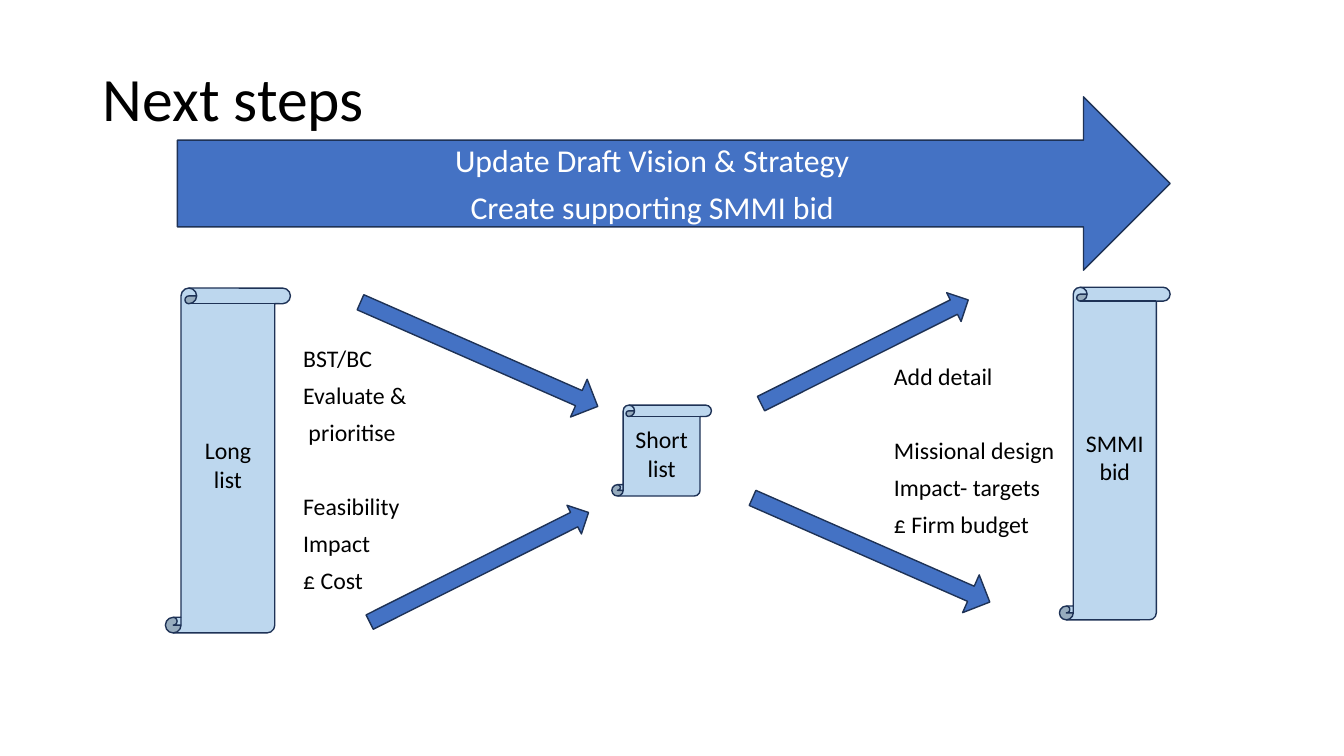
from pptx import Presentation
from pptx.dml.color import RGBColor
from pptx.enum.shapes import MSO_SHAPE
from pptx.enum.text import MSO_ANCHOR, MSO_AUTO_SIZE, PP_ALIGN
from pptx.util import Cm, Pt

ARROW = MSO_SHAPE.RIGHT_ARROW
SCROLL = MSO_SHAPE.VERTICAL_SCROLL
MIDDLE, BOTTOM = MSO_ANCHOR.MIDDLE, MSO_ANCHOR.BOTTOM
LEFT, CENTER = PP_ALIGN.LEFT, PP_ALIGN.CENTER
FIXED, GROW = MSO_AUTO_SIZE.NONE, MSO_AUTO_SIZE.SHAPE_TO_FIT_TEXT
COLORS = {"blue": "4472C4", "pale": "BDD7EE", "edge": "1E3256",
          "black": "000000", "white": "FFFFFF"}


def color(name):
    return RGBColor.from_string(COLORS[name])


def apply(target, values):
    for name, value in values.items():
        setattr(target, name, value)


class Board:
    font = "Calibri"
    size = 17
    after = Pt(6)
    gap = Pt(26.7)

    def __init__(self, deck):
        self.slide = deck.slides.add_slide(deck.slide_layouts[5])

    def fill_text(self, frame, lines, form, size=size, ink="black", breaks=()):
        for i, line in enumerate(lines):
            para = frame.paragraphs[0] if i == 0 else frame.add_paragraph()
            run = para.add_run()
            run.text = line
            apply(para, form)
            if i in breaks:
                para.space_before = self.gap
            apply(run.font, {"name": self.font, "size": Pt(size)})
            run.font.color.rgb = color(ink)

    def title(self, text, box):
        head = self.slide.shapes.title
        apply(head, dict(zip(("left", "top", "width", "height"), map(Cm, box))))
        apply(head.text_frame, {"vertical_anchor": BOTTOM, "word_wrap": True,
                                "auto_size": FIXED})
        form = {"alignment": LEFT, "line_spacing": 0.9, "space_before": Pt(0)}
        self.fill_text(head.text_frame, [text], form, 44)

    def shape(self, kind, box, fill):
        item = self.slide.shapes.add_shape(kind, *map(Cm, box))
        item.shadow.inherit = False
        item.fill.solid()
        item.fill.fore_color.rgb = color(fill)
        item.line.color.rgb = color("edge")
        item.line.width = Pt(1)
        return item

    def label(self, item, lines, **style):
        apply(item.text_frame, {"vertical_anchor": MIDDLE, "word_wrap": True})
        form = {"alignment": CENTER, "space_after": self.after}
        self.fill_text(item.text_frame, lines, form, **style)

    def scroll(self, text, box):
        self.label(self.shape(SCROLL, box, "pale"), [text])

    def arrow(self, box, angle=0, shaft=0.5):
        item = self.shape(ARROW, box, "blue")
        item.rotation = angle
        item.adjustments[0] = shaft
        return item

    def banner(self, lines, box):
        self.label(self.arrow(box), lines, size=22.7, ink="white")

    def notes(self, lines, box, breaks):
        frame = self.slide.shapes.add_textbox(*map(Cm, box)).text_frame
        apply(frame, {"word_wrap": False, "auto_size": GROW})
        form = {"alignment": LEFT, "space_after": self.after}
        self.fill_text(frame, lines, form, breaks=breaks)


def main():
    deck = Presentation()
    apply(deck, {"slide_width": Cm(33.87), "slide_height": Cm(19.05)})
    board = Board(deck)
    board.title("Next steps", (2.34, 0.71, 29.18, 2.82))
    board.scroll("Long list", (4.17, 7.26, 3.15, 8.69))
    board.notes(["BST/BC", "Evaluate &", " prioritise",
                 "Feasibility", "Impact", "£ Cost"],
                (7.39, 8.53, 3.15, 6.63), breaks=[3])
    for left, top in ((8.81, 8.41), (18.69, 13.34)):
        board.arrow((left, top, 6.53, 1.04), 23.7, 0.4)
    for left, top, width in ((8.99, 13.89, 6.17), (18.87, 8.46, 5.84)):
        board.arrow((left, top, width, 0.81), 333.4)
    board.scroll("Short list", (15.42, 10.21, 2.51, 2.29))
    board.notes(["Add detail", "Missional design", "Impact- targets",
                 "£ Firm budget"],
                (22.28, 8.99, 4.6, 4.75), breaks=[1])
    board.scroll("SMMI bid", (26.7, 7.24, 2.79, 8.38))
    board.banner(["Update Draft Vision & Strategy", "Create supporting SMMI bid"],
                 (4.47, 2.44, 25.02, 4.37))
    deck.save("out.pptx")


if __name__ == "__main__":
    main()
